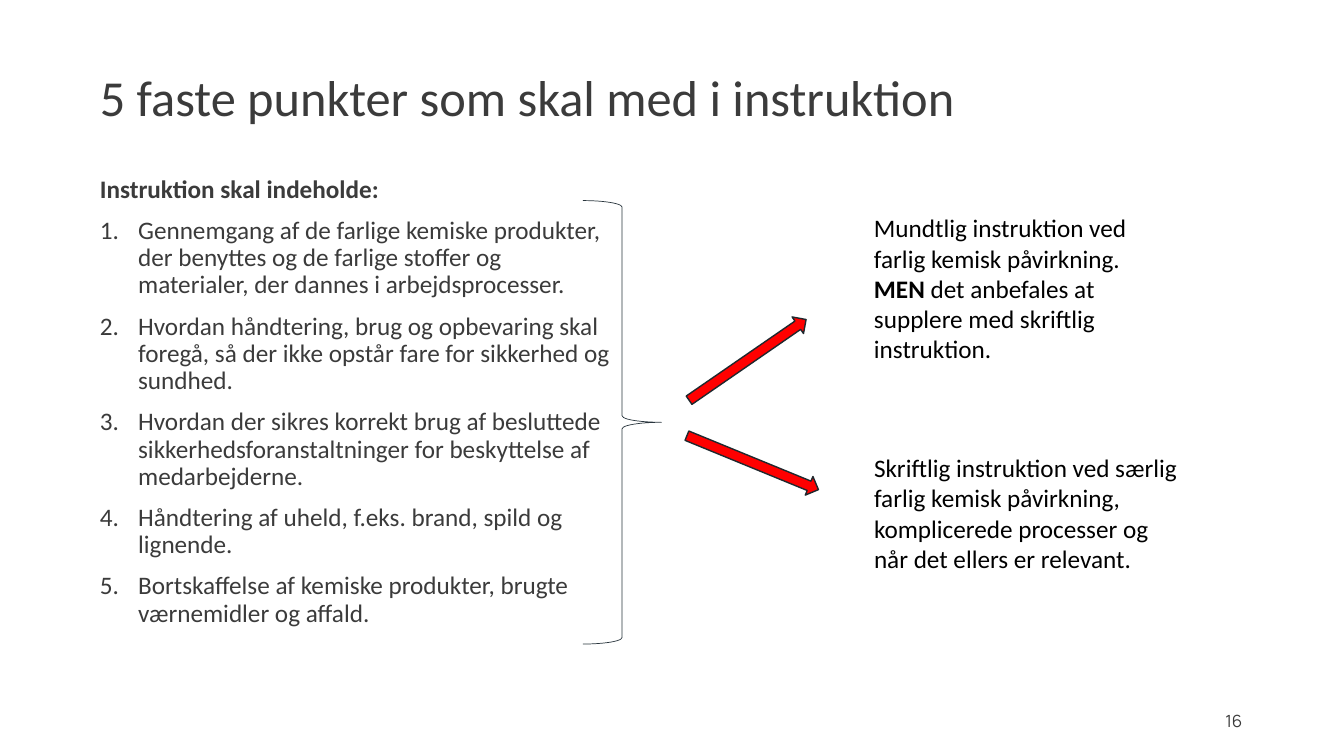
import dataclasses
import typing

import lxml.etree
import pptx
import pptx.dml.color
import pptx.enum.shapes
import pptx.enum.text
import pptx.oxml.ns
import pptx.util

Inches = pptx.util.Inches
Pt = pptx.util.Pt
ALIGN = pptx.enum.text.PP_ALIGN
ANCHOR = pptx.enum.text.MSO_ANCHOR
SHAPE = pptx.enum.shapes.MSO_SHAPE

HUES = {"dark": "3B3B3B", "black": "000000", "red": "FF0000",
        "brace": "2A363E", "edge": "1F282E"}
STEPS = [
    "Gennemgang af de farlige kemiske produkter, der benyttes og de farlige "
    "stoffer og materialer, der dannes i arbejdsprocesser.",
    "Hvordan håndtering, brug og opbevaring skal foregå, så der ikke opstår "
    "fare for sikkerhed og sundhed.",
    "Hvordan der sikres korrekt brug af besluttede "
    "sikkerhedsforanstaltninger for beskyttelse af medarbejderne.",
    "Håndtering af uheld, f.eks. brand, spild og lignende.",
    "Bortskaffelse af kemiske produkter, brugte værnemidler og affald.",
]


@dataclasses.dataclass
class Run:
    text: str
    bold: bool = False


@dataclasses.dataclass
class Note:
    top: float
    width: float
    height: float
    lines: list[list[Run]]


@dataclasses.dataclass
class Arrow:
    left: float
    top: float
    turn: float


NOTES = [
    Note(2.06, 2.96, 1.62, [
        [Run("Mundtlig instruktion ved farlig kemisk påvirkning.")],
        [Run("MEN", True),
         Run(" det anbefales at supplere med skriftlig instruktion.")]]),
    Note(4.44, 3.22, 1.31, [
        [Run("Skriftlig instruktion ved særlig farlig kemisk påvirkning, "
             "komplicerede processer og når det ellers er relevant.")]]),
]
ARROWS = [Arrow(6.71, 3.47, 325.4), Arrow(6.76, 4.49, 22.3)]


def paint(name: str) -> pptx.dml.color.RGBColor:
    return pptx.dml.color.RGBColor.from_string(HUES[name])


def place(shape: typing.Any, left: float, top: float,
          width: float, height: float) -> None:
    shape.left, shape.top = Inches(left), Inches(top)
    shape.width, shape.height = Inches(width), Inches(height)


def setup(shape: typing.Any, anchor: ANCHOR = ANCHOR.TOP) -> typing.Any:
    """Turn on wrapping, turn off fitting and return the text frame."""
    frame = shape.text_frame
    frame.word_wrap = True
    frame.auto_size = pptx.enum.text.MSO_AUTO_SIZE.NONE
    frame.vertical_anchor = anchor
    return frame


def get_line(frame: typing.Any, index: int) -> typing.Any:
    return frame.add_paragraph() if index else frame.paragraphs[0]


def add_run(line: typing.Any, part: Run, hue: str, size: float = 18,
            font: str = "Calibri") -> None:
    run = line.add_run()
    run.text = part.text
    run.font.name, run.font.size, run.font.bold = font, Pt(size), part.bold
    run.font.color.rgb = paint(hue)


def add_title(slide: typing.Any) -> None:
    title = slide.shapes.title
    place(title, 0.89, 0.4, 9.76, 1.19)
    line = setup(title, ANCHOR.MIDDLE).paragraphs[0]
    line.alignment, line.line_spacing = ALIGN.LEFT, 0.9
    add_run(line, Run("5 faste punkter som skal med i instruktion"),
            "dark", 36)


def add_list(slide: typing.Any) -> None:
    body = slide.placeholders[1]
    place(body, 0.89, 1.7, 5.28, 5.06)
    frame = setup(body)
    parts = [Run("Instruktion skal indeholde:", True)] + [Run(s) for s in STEPS]
    for index, part in enumerate(parts):
        line = get_line(frame, index)
        props = line._p.get_or_add_pPr()
        indent = Inches(0.38 if index else 0.31)
        props.set("marL", str(indent))
        props.set("indent", str(-indent))
        kind = "a:buAutoNum" if index else "a:buNone"
        mark = lxml.etree.SubElement(props, pptx.oxml.ns.qn(kind))
        if index:
            mark.set("type", "arabicPeriod")
        line.line_spacing = 0.9
        line.space_before = Pt(10 if index else 0)
        add_run(line, part, "dark")


def add_brace(slide: typing.Any) -> None:
    brace = slide.shapes.add_shape(
        SHAPE.RIGHT_BRACE, Inches(5.78), Inches(1.99), Inches(0.78), Inches(4.4))
    brace.shadow.inherit = False
    brace.fill.background()
    brace.line.color.rgb, brace.line.width = paint("brace"), Pt(0.5)


def add_arrow(slide: typing.Any, arrow: Arrow) -> None:
    shape = slide.shapes.add_shape(
        SHAPE.RIGHT_ARROW, Inches(arrow.left), Inches(arrow.top),
        Inches(1.41), Inches(0.2))
    shape.rotation = arrow.turn
    shape.shadow.inherit = False
    shape.fill.solid()
    shape.fill.fore_color.rgb = paint("red")
    shape.line.color.rgb, shape.line.width = paint("edge"), Pt(1)


def add_note(slide: typing.Any, note: Note) -> None:
    box = slide.shapes.add_textbox(
        Inches(8.57), Inches(note.top), Inches(note.width), Inches(note.height))
    frame = setup(box)
    frame.auto_size = pptx.enum.text.MSO_AUTO_SIZE.SHAPE_TO_FIT_TEXT
    for index, parts in enumerate(note.lines):
        line = get_line(frame, index)
        for part in parts:
            add_run(line, part, "black")


def add_number(slide: typing.Any) -> None:
    box = slide.shapes.add_textbox(
        Inches(9.42), Inches(6.95), Inches(3), Inches(0.4))
    line = setup(box, ANCHOR.MIDDLE).paragraphs[0]
    line.alignment = ALIGN.RIGHT
    add_run(line, Run("16"), "dark", 12, "Manrope")


def main() -> None:
    deck = pptx.Presentation()
    deck.slide_width, deck.slide_height = Inches(13.33), Inches(7.5)
    slide = deck.slides.add_slide(deck.slide_layouts[1])
    add_title(slide)
    add_list(slide)
    add_brace(slide)
    for arrow in ARROWS:
        add_arrow(slide, arrow)
    for note in NOTES:
        add_note(slide, note)
    add_number(slide)
    deck.save("out.pptx")


if __name__ == "__main__":
    main()
